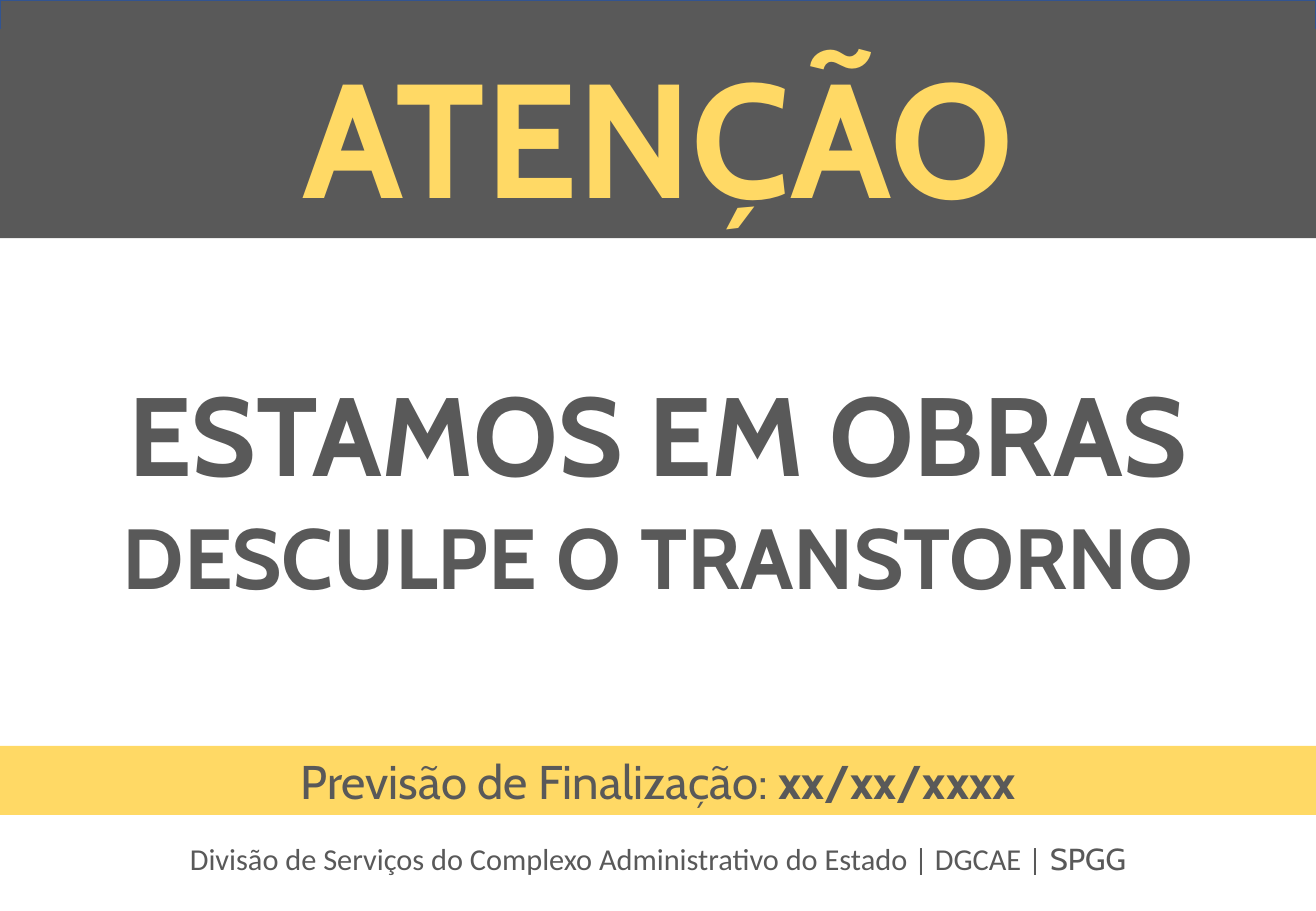
from dataclasses import dataclass

from pptx import Presentation
from pptx.dml.color import RGBColor
from pptx.enum.shapes import MSO_SHAPE
from pptx.enum.text import MSO_ANCHOR, MSO_AUTO_SIZE, PP_ALIGN
from pptx.util import Emu, Pt

EMU_PER_PX = 9144
WIDTH, HEIGHT = 1083, 750


def px(length):
    return Emu(length * EMU_PER_PX)


@dataclass(frozen=True)
class Theme:
    gray: RGBColor = RGBColor(0x59, 0x59, 0x59)
    yellow: RGBColor = RGBColor(0xFF, 0xD9, 0x65)
    outline: RGBColor = RGBColor(0x32, 0x54, 0x91)
    display_font: str = "Cabin"
    footer_font: str = "Calibri"
    warning_size: float = 96
    headline_size: float = 66
    apology_size: float = 50.5
    forecast_size: float = 28
    footer_size: float = 18


class Sign:
    """Draws full-width elements, each placed by its top and height."""

    def __init__(self, slide, theme):
        self.slide = slide
        self.theme = theme

    def band(self, top, height, fill, line=None):
        band = self.slide.shapes.add_shape(
            MSO_SHAPE.RECTANGLE, 0, px(top), px(WIDTH), px(height))
        band.shadow.inherit = False
        band.fill.solid()
        band.fill.fore_color.rgb = fill
        if line is None:
            band.line.fill.background()
        else:
            band.line.color.rgb = line
            band.line.width = Pt(1)
        return band

    def title(self, top, height, text, size, color, fill):
        title = self.slide.shapes.title
        # Bring the title in front of the bands drawn so far.
        self.slide.shapes.element.append(title.element)
        title.left, title.top = 0, px(top)
        title.width, title.height = px(WIDTH), px(height)
        title.fill.solid()
        title.fill.fore_color.rgb = fill
        self.set_line(title, [(text, self.theme.display_font, True)],
                      size, color, MSO_ANCHOR.MIDDLE)

    def text(self, top, height, parts, size):
        box = self.slide.shapes.add_textbox(0, px(top), px(WIDTH), px(height))
        self.set_line(box, parts, size, self.theme.gray)

    def set_line(self, shape, parts, size, color, anchor=MSO_ANCHOR.TOP):
        """Fill a shape with one centred line of (text, font, bold) parts."""
        frame = shape.text_frame
        frame.word_wrap = True
        frame.auto_size = MSO_AUTO_SIZE.SHAPE_TO_FIT_TEXT
        frame.vertical_anchor = anchor
        line = frame.paragraphs[0]
        line.alignment = PP_ALIGN.CENTER
        for text, font, bold in parts:
            run = line.add_run()
            run.text = text
            run.font.name = font
            run.font.size = Pt(size)
            run.font.bold = bold
            run.font.color.rgb = color


def main():
    presentation = Presentation()
    presentation.slide_width, presentation.slide_height = px(WIDTH), px(HEIGHT)
    title_only = presentation.slide_layouts[5]
    theme = Theme()
    sign = Sign(presentation.slides.add_slide(title_only), theme)
    display = theme.display_font

    sign.band(0, 100, theme.gray, theme.outline)
    sign.title(24, 172, "ATENÇÃO", theme.warning_size, theme.yellow, theme.gray)
    sign.text(296, 121, [("ESTAMOS EM OBRAS", display, True)],
              theme.headline_size)
    sign.text(410, 96, [("DESCULPE O TRANSTORNO", display, True)],
              theme.apology_size)
    sign.text(687, 40, [
        ("Divisão de Serviços do Complexo Administrativo do Estado | DGCAE | ",
         theme.footer_font, False),
        ("SPGG", display, False),
    ], theme.footer_size)

    forecast = sign.band(614, 57, theme.yellow)
    sign.set_line(forecast, [
        ("Previsão de Finalização: ", display, False),
        ("xx/xx/xxxx", display, True),
    ], theme.forecast_size, theme.gray)

    presentation.save("out.pptx")


if __name__ == "__main__":
    main()
